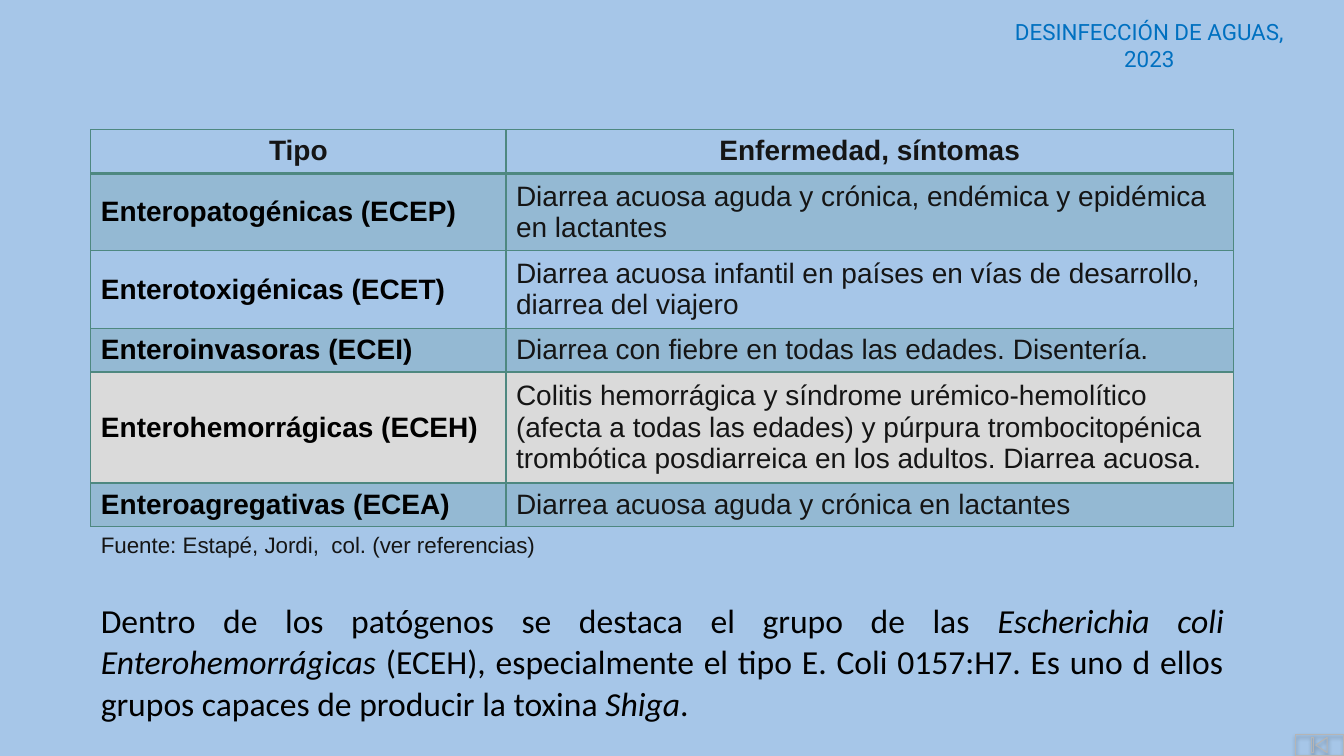
from lxml import etree
from pptx import Presentation
from pptx.dml.color import RGBColor
from pptx.enum import shapes, text
from pptx.oxml import parse_xml
from pptx.oxml.ns import nsdecls, qn
from pptx.util import Cm, Pt

COLORS = {
    "background": "A6C6E8",
    "heading": "0070C0",
    "green": "4E8880",
    "highlight": "DADADA",
    "body": "151515",
    "black": "000000",
    "button": "B5B5B5",
}

HEADER = ("Tipo", "Enfermedad, síntomas")
# Type, symptoms, fill, row height in cm
TYPES = [
    ("Enteropatogénicas (ECEP)",
     "Diarrea acuosa aguda y crónica, endémica y epidémica en lactantes", "green", 1.94),
    ("Enterotoxigénicas (ECET)",
     "Diarrea acuosa infantil en países en vías de desarrollo, diarrea del viajero", None, 1.94),
    ("Enteroinvasoras (ECEI)",
     "Diarrea con fiebre en todas las edades. Disentería.", "green", 1.1),
    ("Enterohemorrágicas (ECEH)",
     "Colitis hemorrágica y síndrome urémico-hemolítico (afecta a todas las edades) y púrpura "
     "trombocitopénica trombótica posdiarreica en los adultos. Diarrea acuosa.", "highlight", 2.8),
    ("Enteroagregativas (ECEA)",
     "Diarrea acuosa aguda y crónica en lactantes", "green", 1.1),
]
HEADER_HEIGHT = 1.1
COLUMN_WIDTHS = (10.46, 18.34)
LEFT = 2.29

# Text and whether it is italic
CONCLUSION = [
    ("Dentro de los patógenos se destaca el grupo de las ", False),
    ("Escherichia coli Enterohemorrágicas", True),
    (" (ECEH), especialmente el tipo E. Coli 0157:H7. Es uno d ellos grupos capaces de "
     "producir la toxina ", False),
    ("Shiga", True),
    (".", False),
]


def rgb(name):
    return RGBColor.from_string(COLORS[name])


def style(paragraph, font, size, color, align=text.PP_ALIGN.LEFT, bold=False):
    paragraph.alignment = align
    paragraph.font.name = font
    paragraph.font.size = Pt(size)
    paragraph.font.bold = bold
    paragraph.font.color.rgb = rgb(color)


def add_text(slide, left, top, width, height, runs, **look):
    frame = slide.shapes.add_textbox(Cm(left), Cm(top), Cm(width), Cm(height)).text_frame
    frame.word_wrap = True
    frame.auto_size = text.MSO_AUTO_SIZE.SHAPE_TO_FIT_TEXT
    paragraph = frame.paragraphs[0]
    style(paragraph, **look)
    for words, italic in runs:
        run = paragraph.add_run()
        run.text = words
        if italic:
            run.font.italic = True
    return paragraph


def set_borders(cell, top, bottom):
    properties = cell._tc.get_or_add_tcPr()
    for index, (side, width) in enumerate((("L", 1), ("R", 1), ("T", top), ("B", bottom))):
        properties.insert(index, parse_xml(
            f'<a:ln{side} {nsdecls("a")} w="{Pt(width)}"><a:solidFill>'
            f'<a:srgbClr val="{COLORS["green"]}"/></a:solidFill></a:ln{side}>'))


def fill_cell(cell, fill):
    if fill is None:
        cell.fill.background()
        return
    cell.fill.solid()
    cell.fill.fore_color.rgb = rgb(fill)
    if fill == "green":
        color = cell._tc.tcPr.find(qn("a:solidFill")).find(qn("a:srgbClr"))
        etree.SubElement(color, qn("a:alpha")).set("val", "20000")


def add_types_table(slide):
    rows = [(*HEADER, None, HEADER_HEIGHT)] + TYPES
    table = slide.shapes.add_table(
        len(rows), len(COLUMN_WIDTHS), Cm(LEFT), Cm(3.27),
        Cm(sum(COLUMN_WIDTHS)), Cm(sum(row[-1] for row in rows))).table
    table.first_row = table.horz_banding = False
    for column, width in zip(table.columns, COLUMN_WIDTHS):
        column.width = Cm(width)

    for number, (kind, symptoms, fill, height) in enumerate(rows):
        table.rows[number].height = Cm(height)
        is_header = number == 0
        for column, words in enumerate((kind, symptoms)):
            cell = table.cell(number, column)
            cell.text = words
            if not is_header:
                cell.vertical_anchor = text.MSO_ANCHOR.MIDDLE
            style(cell.text_frame.paragraphs[0], "Arial", 20,
                  "body" if is_header or column else "black",
                  text.PP_ALIGN.CENTER if is_header else text.PP_ALIGN.LEFT,
                  bold=is_header or column == 0)
            fill_cell(cell, fill)
            set_borders(cell, top=2 if number == 1 else 1, bottom=2 if is_header else 1)


def add_back_button(slide):
    button = slide.shapes.add_shape(
        shapes.MSO_SHAPE.ACTION_BUTTON_BEGINNING, Cm(32.66), Cm(18.52), Cm(1.19), Cm(0.51))
    button.fill.background()
    button.line.color.rgb = rgb("button")
    button.line.width = Pt(0.75)
    button._element.spPr.append(parse_xml(
        f'<a:effectLst {nsdecls("a")}><a:outerShdw blurRad="{Pt(3.1)}" dist="{Pt(1.6)}" '
        f'dir="5400000" rotWithShape="0"><a:srgbClr val="{COLORS["black"]}">'
        '<a:alpha val="38000"/></a:srgbClr></a:outerShdw></a:effectLst>'))


def main():
    deck = Presentation()
    deck.slide_width, deck.slide_height = Cm(33.87), Cm(19.05)
    slide = deck.slides.add_slide(deck.slide_layouts[6])
    slide.background.fill.solid()
    slide.background.fill.fore_color.rgb = rgb("background")

    # Corner button and course heading
    add_back_button(slide)
    add_text(slide, 24.94, 0.33, 8.05, 0.94, [("DESINFECCIÓN DE AGUAS, 2023", False)],
             font="Roboto", size=16, color="heading", align=text.PP_ALIGN.CENTER)

    # Table of types with its source
    add_types_table(slide)
    add_text(slide, LEFT, 13.26, 26.11, 0.94,
             [("Fuente: Estapé, Jordi,  col. (ver referencias)", False)],
             font="Arial", size=16, color="body")

    # Conclusion
    conclusion = add_text(slide, LEFT, 14.94, sum(COLUMN_WIDTHS), 3.38, CONCLUSION,
                          font="Calibri", size=24, color="black",
                          align=text.PP_ALIGN.JUSTIFY)
    conclusion.line_spacing = 1.04

    deck.save("out.pptx")


if __name__ == "__main__":
    main()
